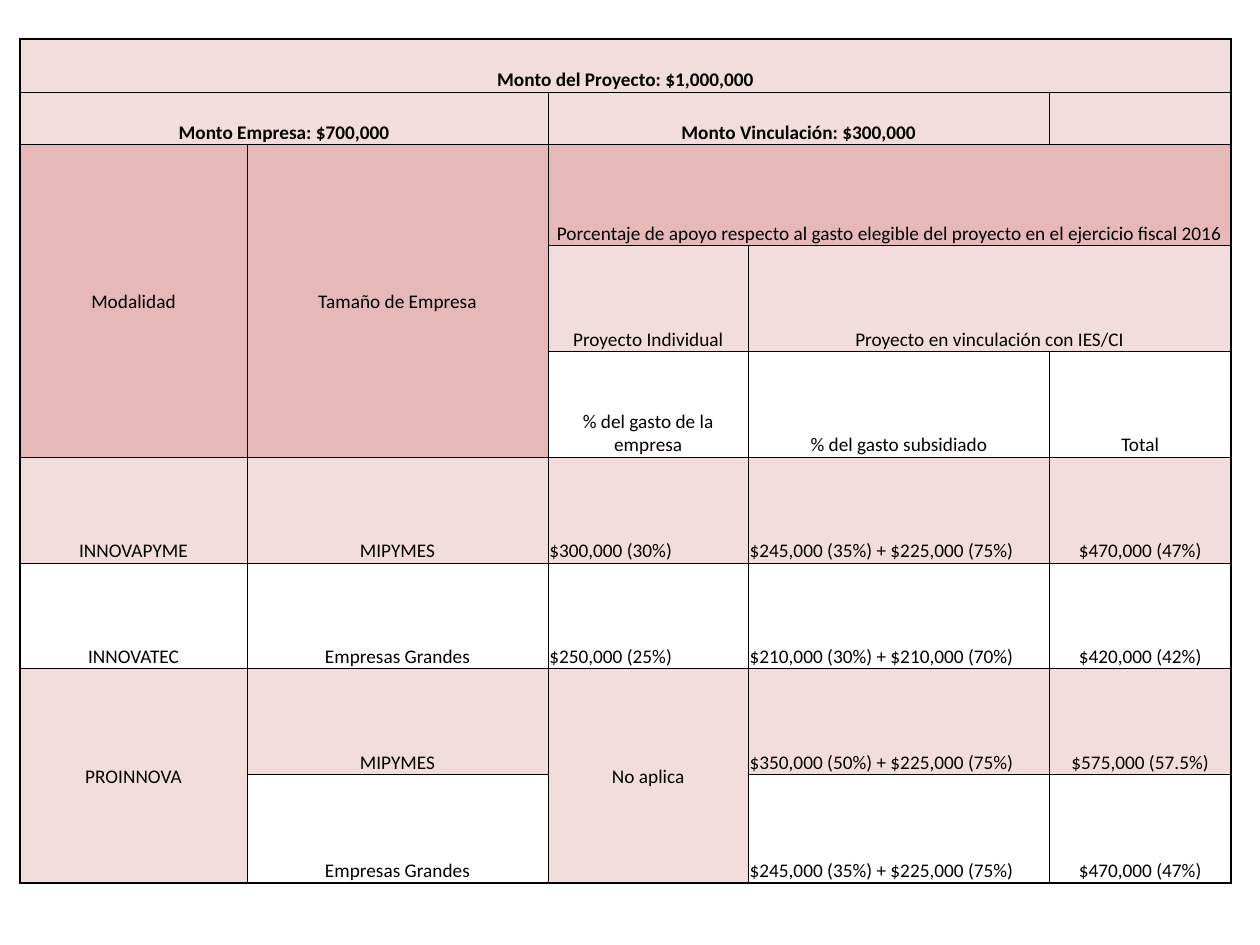
from lxml.etree import SubElement as Sub
from pptx import Presentation
from pptx.dml.color import RGBColor as Rgb
from pptx.enum.text import MSO_ANCHOR as Anchor, PP_ALIGN as Align
from pptx.oxml.ns import qn
from pptx.util import Pt

PX = 9144  # EMU per px, 100 px to the inch
HUES = {"rose": "E6B9B8", "pale": "F2DDDC", "ink": "000000"}
COLS = [180, 239, 159, 239, 144]
ROWS = [42, 42, 80, 84, 84, 84, 84, 84, 86]

# row, column, rows spanned, columns spanned, fill, text
HEAD = [
    (0, 0, 1, 5, "pale", "Monto del Proyecto: $1,000,000"),
    (1, 0, 1, 2, "pale", "Monto Empresa: $700,000"),
    (1, 2, 1, 2, "pale", "Monto Vinculación: $300,000"),
    (1, 4, 1, 1, "pale", ""),
    (2, 0, 3, 1, "rose", "Modalidad"),
    (2, 1, 3, 1, "rose", "Tamaño de Empresa"),
    (2, 2, 1, 3, "rose", "Porcentaje de apoyo respecto al gasto elegible "
                         "del proyecto en el ejercicio fiscal 2016"),
    (3, 2, 1, 1, "pale", "Proyecto Individual"),
    (3, 3, 1, 2, "pale", "Proyecto en vinculación con IES/CI"),
    (4, 2, 1, 1, None, "% del gasto de la empresa"),
    (4, 3, 1, 1, None, "% del gasto subsidiado"),
    (4, 4, 1, 1, None, "Total"),
]
# None marks a cell covered by the one above
BODY = [
    ("INNOVAPYME", "MIPYMES", "$300,000 (30%)",
     "$245,000 (35%) + $225,000 (75%)", "$470,000 (47%)"),
    ("INNOVATEC", "Empresas Grandes", "$250,000 (25%)",
     "$210,000 (30%) + $210,000 (70%)", "$420,000 (42%)"),
    ("PROINNOVA", "MIPYMES", "No aplica",
     "$350,000 (50%) + $225,000 (75%)", "$575,000 (57.5%)"),
    (None, "Empresas Grandes", None,
     "$245,000 (35%) + $225,000 (75%)", "$470,000 (47%)"),
]


def body_cells():
    """Turn the body rows into cells, with every other row tinted."""
    top = len(HEAD) and len(ROWS) - len(BODY)
    for i, line in enumerate(BODY):
        for col, text in enumerate(line):
            if text is not None:
                below = BODY[i + 1][col] if i + 1 < len(BODY) else ""
                tall = 2 if below is None else 1
                yield top + i, col, tall, 1, None if i % 2 else "pale", text


def edge(cell, outer):
    """Rule the four sides, heavier on the outside of the table."""
    props = cell._tc.get_or_add_tcPr()
    for side in "LRTB":
        line = Sub(props, qn(f"a:ln{side}"), w=str(Pt(1 if side in outer else 0.5)))
        fill = Sub(line, qn("a:solidFill"))
        Sub(fill, qn("a:srgbClr"), val=HUES["ink"])


def fill_cell(table, row, col, tall, wide, hue, text):
    cell = table.cell(row, col)
    if tall * wide > 1:
        cell.merge(table.cell(row + tall - 1, col + wide - 1))
    sides = {"L": col == 0, "R": col + wide == len(COLS),
             "T": row == 0, "B": row + tall == len(ROWS)}
    edge(cell, [side for side, out in sides.items() if out])
    if hue:
        cell.fill.solid()
        cell.fill.fore_color.rgb = Rgb.from_string(HUES[hue])
    else:
        cell.fill.background()

    # Text: tall cells are centred, single amounts are set left
    cell.margin_left = cell.margin_right = cell.margin_top = PX
    cell.margin_bottom = 0
    cell.vertical_anchor = Anchor.MIDDLE if tall > 1 else Anchor.BOTTOM
    cell.text = text
    par = cell.text_frame.paragraphs[0]
    amount = row > 4 and col in (2, 3) and tall == 1
    par.alignment = Align.LEFT if amount else Align.CENTER
    font = par.font
    font.name, font.size, font.bold = "Calibri", Pt(11), row < 2
    font.color.rgb = Rgb.from_string(HUES["ink"])


def add_grid(slide, left, top, width, height):
    box = [n * PX for n in (left, top, width, height)]
    table = slide.shapes.add_table(len(ROWS), len(COLS), *box).table
    table.first_row = table.horz_banding = False
    for col, size in zip(table.columns, COLS):
        col.width = size * PX
    for row, size in zip(table.rows, ROWS):
        row.height = size * PX
    for item in [*HEAD, *body_cells()]:
        fill_cell(table, *item)


def main():
    deck = Presentation()
    deck.slide_width, deck.slide_height = 1000 * PX, 750 * PX
    slide = deck.slides.add_slide(deck.slide_layouts[6])
    add_grid(slide, 16, 31, sum(COLS), sum(ROWS))
    deck.save("out.pptx")


if __name__ == "__main__":
    main()
